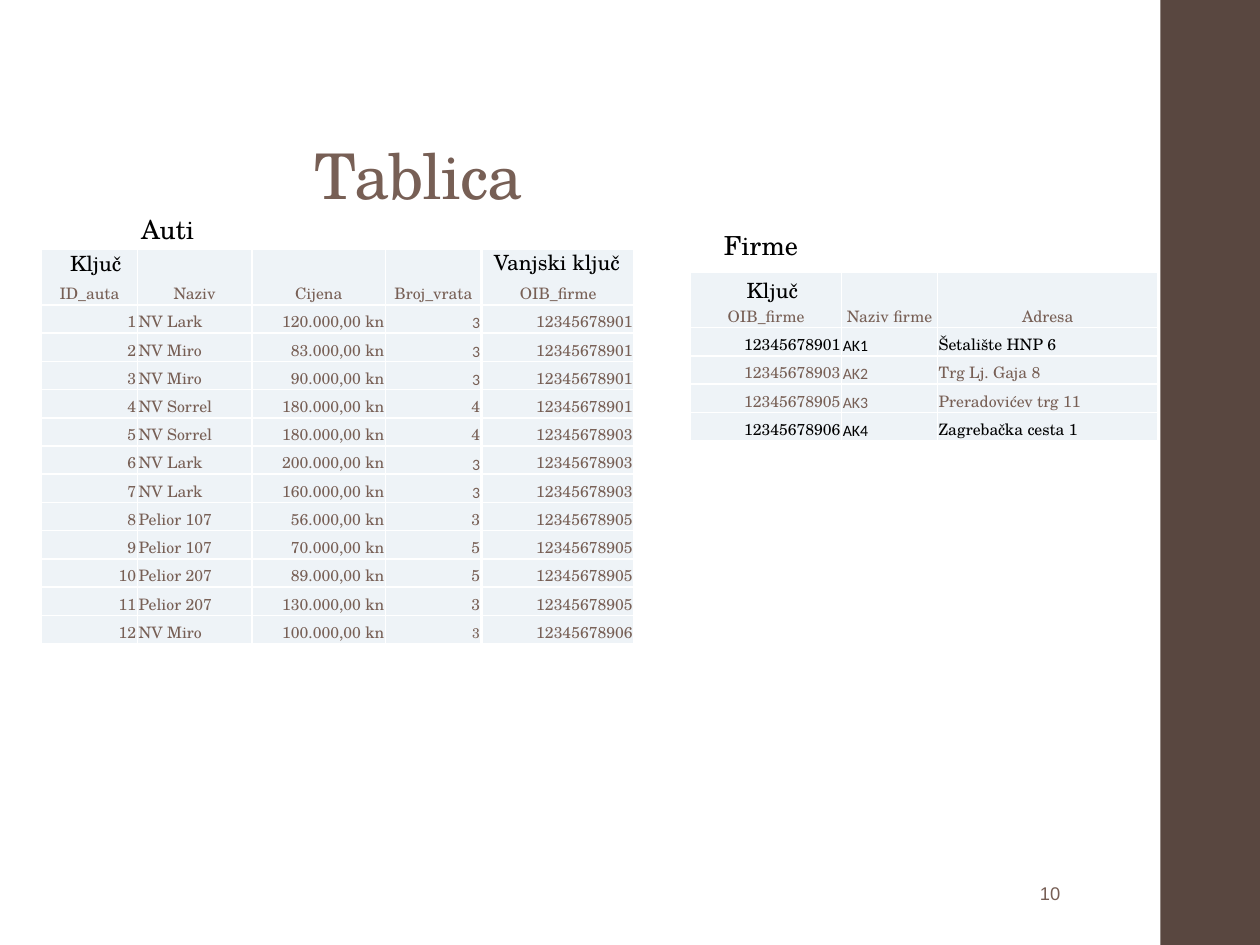
from dataclasses import dataclass

from lxml import etree
from pptx import Presentation
from pptx import util as u
from pptx.dml.color import RGBColor
from pptx.enum import shapes, text
from pptx.oxml import ns


@dataclass(frozen=True)
class Theme:
    brown: str = "775F55"
    dark: str = "594740"
    black: str = "000000"
    white: str = "FFFFFF"
    cell: str = "EEF3F7"
    serif: str = "TeX Gyre Schola"
    sans: str = "Calibri"
    number_font: str = "Arial"
    title: float = 36
    heading: float = 15
    key: float = 12
    number: float = 10.5
    body: float = 9
    small: float = 8


THEME = Theme()
LEFT, CENTER, RIGHT = text.PP_ALIGN.LEFT, text.PP_ALIGN.CENTER, text.PP_ALIGN.RIGHT
CELL_INSETS = (0.01, 0.01, 0.01, 0)
LABEL_INSETS = (0.07, 0.04, 0.07, 0.04)

CARS = [
    ("NV Lark", "120.000,00 kn", "3"),
    ("NV Miro", "83.000,00 kn", "3"),
    ("NV Miro", "90.000,00 kn", "3"),
    ("NV Sorrel", "180.000,00 kn", "4"),
    ("NV Sorrel", "180.000,00 kn", "4"),
    ("NV Lark", "200.000,00 kn", "3"),
    ("NV Lark", "160.000,00 kn", "3"),
    ("Pelior 107", "56.000,00 kn", "3"),
    ("Pelior 107", "70.000,00 kn", "5"),
    ("Pelior 207", "89.000,00 kn", "5"),
    ("Pelior 207", "130.000,00 kn", "3"),
    ("NV Miro", "100.000,00 kn", "3"),
]
CAR_OWNERS = (["12345678901"] * 4 + ["12345678903"] * 3
              + ["12345678905"] * 4 + ["12345678906"])
FIRMS = [
    ("12345678901", "AK1", "Šetalište HNP 6"),
    ("12345678903", "AK2", "Trg Lj. Gaja 8"),
    ("12345678905", "AK3", "Preradovićev trg 11"),
    ("12345678906", "AK4", "Zagrebačka cesta 1"),
]
SANS_DOOR_ROWS = (1, 2, 3, 6, 7)
BLACK_FIRM_ROWS = (1, 4)


def write(para, words, size=THEME.body, font=THEME.serif, color=THEME.brown,
          align=LEFT, spacing=None):
    para.alignment = align
    span = para.add_run()
    span.text = words
    span.font.size = u.Pt(size)
    span.font.name = font
    span.font.color.rgb = RGBColor.from_string(color)
    if spacing is not None:
        span.font._element.set("spc", str(int(spacing * 100)))


def set_insets(target, insets):
    for side, value in zip(("left", "top", "right", "bottom"), insets):
        setattr(target, f"margin_{side}", u.Inches(value))


def add_text(page, place, words, anchor=text.MSO_ANCHOR.TOP, wrap=True,
             insets=(0.1, 0.05, 0.1, 0.05), line_spacing=None, **style):
    box = page.shapes.add_textbox(*map(u.Inches, place))
    frame = box.text_frame
    frame.word_wrap = wrap
    frame.vertical_anchor = anchor
    if not wrap:
        frame.auto_size = text.MSO_AUTO_SIZE.SHAPE_TO_FIT_TEXT
    set_insets(frame, insets)
    para = frame.paragraphs[0]
    if line_spacing:
        para.line_spacing = line_spacing
    write(para, words, **style)


def add_label(page, place, words, size):
    add_text(page, place, words, wrap=False, insets=LABEL_INSETS,
             size=size, color=THEME.black, align=CENTER)


def add_cell_borders(cell):
    properties = cell._tc.get_or_add_tcPr()
    for position, side in enumerate(("lnL", "lnR", "lnT", "lnB")):
        line = etree.Element(ns.qn(f"a:{side}"), w=str(u.Pt(1)))
        fill = etree.SubElement(line, ns.qn("a:solidFill"))
        etree.SubElement(fill, ns.qn("a:srgbClr"), val=THEME.white)
        properties.insert(position, line)


def add_data_table(page, place, widths, rows, aligns, style_of):
    header_height = 0.44
    grid = page.shapes.add_table(len(rows), len(widths), *map(u.Inches, place)).table
    grid.first_row = grid.horz_banding = False
    for column, width in zip(grid.columns, widths):
        column.width = u.Inches(width)
    body_height = (place[3] - header_height) / (len(rows) - 1)
    for r, values in enumerate(rows):
        grid.rows[r].height = u.Inches(body_height if r else header_height)
        for c, value in enumerate(values):
            cell = grid.cell(r, c)
            cell.fill.solid()
            cell.fill.fore_color.rgb = RGBColor.from_string(THEME.cell)
            cell.vertical_anchor = text.MSO_ANCHOR.BOTTOM
            set_insets(cell, CELL_INSETS)
            add_cell_borders(cell)
            write(cell.text_frame.paragraphs[0], value,
                  align=aligns[c] if r else CENTER, **style_of(r, c))


def car_style(row, column):
    if column == 3 and row in SANS_DOOR_ROWS:
        return {"font": THEME.sans}
    if column == 3 and row == len(CARS):
        return {"size": THEME.small}
    return {}


def firm_style(row, column):
    return {
        "font": THEME.sans if row and column == 1 else THEME.serif,
        "color": THEME.black if row in BLACK_FIRM_ROWS else THEME.brown,
    }


def add_cars(page, left, top):
    height = 3.13
    rows = [("ID_auta", "Naziv", "Cijena", "Broj_vrata")]
    rows += [(str(number), *car) for number, car in enumerate(CARS, 1)]
    add_data_table(page, (left, top, 3.5, height), (0.76, 0.91, 1.06, 0.76), rows,
                   (RIGHT, LEFT, RIGHT, RIGHT), car_style)
    owners = [("OIB_firme",)] + [(owner,) for owner in CAR_OWNERS]
    add_data_table(page, (left + 3.5, top, 1.2, height), (1.2,), owners,
                   (RIGHT,), lambda row, column: {})
    add_label(page, (left + 0.71, top - 0.33, 0.58, 0.33), "Auti", THEME.heading)
    add_label(page, (left + 3.5, top - 0.04, 1.18, 0.28), "Vanjski ključ", THEME.key)
    add_label(page, (left + 0.15, top - 0.03, 0.56, 0.28), "Ključ", THEME.key)


def add_firms(page, left, top):
    rows = [("OIB_firme", "Naziv firme", "Adresa")] + FIRMS
    add_data_table(page, (left, top, 3.71, 1.34), (1.2, 0.76, 1.75), rows,
                   (RIGHT, LEFT, LEFT), firm_style)
    add_label(page, (left + 0.19, top - 0.38, 0.74, 0.33), "Firme", THEME.heading)
    add_label(page, (left + 0.37, top, 0.56, 0.28), "Ključ", THEME.key)


def add_side_bar(page, place):
    bar = page.shapes.add_shape(shapes.MSO_SHAPE.RECTANGLE, *map(u.Inches, place))
    bar.shadow.inherit = False
    bar.fill.solid()
    bar.fill.fore_color.rgb = RGBColor.from_string(THEME.dark)
    bar.line.fill.background()


def main():
    deck = Presentation()
    deck.slide_width, deck.slide_height = u.Inches(10), u.Inches(7.5)
    page = deck.slides.add_slide(deck.slide_layouts[6])
    add_side_bar(page, (9.21, 0, 0.8, 7.5))
    add_text(page, (2.4, 1.16, 5.97, 0.58), "Tablica", anchor=text.MSO_ANCHOR.BOTTOM,
             line_spacing=0.9, size=THEME.title, spacing=-0.5)
    add_text(page, (7.17, 6.83, 2.33, 0.52), "10", anchor=text.MSO_ANCHOR.MIDDLE,
             insets=(0.03, 0.05, 0.03, 0.05), size=THEME.number,
             font=THEME.number_font, align=CENTER)
    add_cars(page, 0.33, 1.98)
    add_firms(page, 5.48, 2.16)
    deck.save("out.pptx")


if __name__ == "__main__":
    main()
